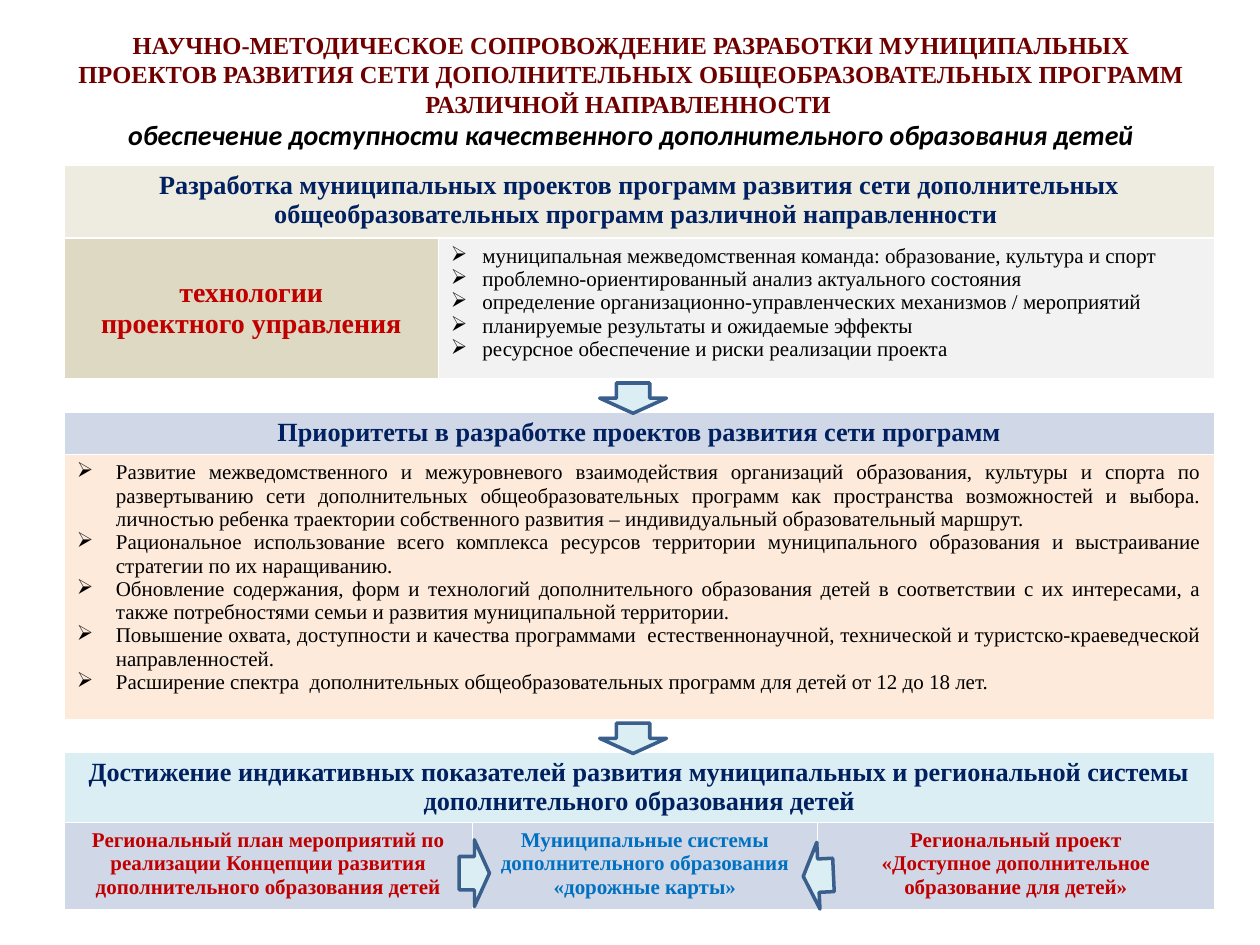
from lxml.etree import SubElement
from pptx import Presentation
from pptx.dml.color import RGBColor
from pptx.enum.shapes import MSO_SHAPE as SHAPE
from pptx.enum.text import MSO_ANCHOR as ANCHOR, MSO_AUTO_SIZE as AUTO, PP_ALIGN as ALIGN
from pptx.oxml.ns import qn
from pptx.util import Inches, Pt

MAROON = RGBColor(0x70, 0x00, 0x00)
BLACK = RGBColor(0x00, 0x00, 0x00)
WHITE = RGBColor(0xFF, 0xFF, 0xFF)
NAVY = RGBColor(0x00, 0x20, 0x60)
RED = RGBColor(0xC0, 0x00, 0x00)
BLUE = RGBColor(0x00, 0x70, 0xC0)
CREAM = RGBColor(0xEE, 0xEC, 0xE1)
KHAKI = RGBColor(0xDD, 0xD9, 0xC3)
GREY = RGBColor(0xF2, 0xF2, 0xF2)
LAVENDER = RGBColor(0xD0, 0xD8, 0xE8)
PEACH = RGBColor(0xFD, 0xEA, 0xDA)
AQUA = RGBColor(0xDB, 0xEE, 0xF4)
STEEL = RGBColor(0x3A, 0x5F, 0x8C)

SERIF = "Times New Roman"
COLUMNS = [1.14, 1.14, 0.69, 0.27, 1.33, 1.14, 0.27, 0.87, 1.14, 1.14]
ROWS = [0.58, 1.12, 0.26, 0.34, 2.1, 0.26, 0.55, 0.69]
SPACER_ROWS = (2, 5)

TITLE = ("НАУЧНО-МЕТОДИЧЕСКОЕ СОПРОВОЖДЕНИЕ РАЗРАБОТКИ МУНИЦИПАЛЬНЫХ "
         "ПРОЕКТОВ РАЗВИТИЯ СЕТИ ДОПОЛНИТЕЛЬНЫХ ОБЩЕОБРАЗОВАТЕЛЬНЫХ ПРОГРАММ "
         "РАЗЛИЧНОЙ НАПРАВЛЕННОСТИ ")
SUBTITLE = "обеспечение доступности качественного дополнительного образования детей"
DEVELOPMENT = ("Разработка муниципальных проектов программ развития сети дополнительных "
               "общеобразовательных программ различной направленности ")
TECHNOLOGIES = [
    "муниципальная межведомственная команда: образование, культура и спорт",
    "проблемно-ориентированный анализ актуального состояния",
    "определение организационно-управленческих механизмов / мероприятий",
    "планируемые результаты и ожидаемые эффекты",
    "ресурсное обеспечение и риски реализации проекта",
]
PRIORITIES = [
    "Развитие межведомственного и межуровневого взаимодействия организаций образования, "
    "культуры и спорта по развертыванию сети дополнительных общеобразовательных программ "
    "как пространства возможностей и выбора. личностью ребенка траектории собственного "
    "развития – индивидуальный образовательный маршрут.",
    "Рациональное использование всего комплекса ресурсов территории муниципального "
    "образования и выстраивание стратегии по их наращиванию.",
    "Обновление содержания, форм и технологий дополнительного образования детей в "
    "соответствии с их интересами, а также потребностями семьи и развития муниципальной "
    "территории.",
    "Повышение охвата, доступности и качества программами  естественнонаучной, "
    "технической и туристско-краеведческой направленностей.",
    "Расширение спектра  дополнительных общеобразовательных программ для детей "
    "от 12 до 18 лет.",
]
INDICATORS = ("Достижение индикативных показателей развития муниципальных и региональной "
              "системы дополнительного образования детей")
REGIONAL_PLAN = ["Региональный план мероприятий по реализации Концепции развития "
                 "дополнительного образования детей"]
ROADMAPS = ["Муниципальные системы дополнительного образования", "«дорожные карты»"]
REGIONAL_PROJECT = ["Региональный проект", "«Доступное дополнительное",
                    "образование для детей»"]


def add_run(p, text, size, color, font=SERIF, bold=True, italic=False):
    r = p.add_run()
    r.text = text
    f = r.font
    f.name, f.size, f.bold, f.italic = font, Pt(size), bold, italic
    f.color.rgb = color


def set_bullet(p, indent):
    """Give the paragraph an arrow bullet with a hanging indent in inches."""
    pPr = p._p.get_or_add_pPr()
    pPr.set("marL", str(Inches(indent)))
    pPr.set("indent", str(-Inches(indent)))
    SubElement(pPr, qn("a:buChar")).set("char", "➢")


def paint(cell, color):
    cell.fill.solid()
    cell.fill.fore_color.rgb = color


def fill_cell(table, row, col, span, fill, lines, size, color,
              bold=True, indent=None, anchor=ANCHOR.TOP):
    """Merge span columns from col; an indent makes the lines a justified list."""
    cell = table.cell(row, col)
    cell.merge(table.cell(row, col + span - 1))
    paint(cell, fill)
    cell.vertical_anchor = anchor
    tf = cell.text_frame
    for i, line in enumerate(lines):
        p = tf.add_paragraph() if i else tf.paragraphs[0]
        p.alignment = ALIGN.CENTER if indent is None else ALIGN.JUSTIFY
        if indent is not None:
            set_bullet(p, indent)
        add_run(p, line, size, color, bold=bold)


def fill_spacer_row(table, row):
    for col in (3, 6):
        table.cell(row, col).merge(table.cell(row, col + 1))
    for cell in table.rows[row].cells:
        paint(cell, WHITE)
        # A small end mark keeps the empty row low.
        SubElement(cell.text_frame.paragraphs[0]._p, qn("a:endParaRPr")).set("sz", "800")


def add_title(slide):
    sp = slide.shapes.title
    sp.left, sp.top, sp.width, sp.height = (Inches(v) for v in (0.51, 0.13, 9, 1.18))
    tf = sp.text_frame
    tf.word_wrap = True
    tf.auto_size = AUTO.NONE
    tf.vertical_anchor = ANCHOR.MIDDLE
    p = tf.paragraphs[0]
    p.alignment = ALIGN.CENTER
    add_run(p, TITLE, 14, MAROON)
    p.add_line_break()
    add_run(p, SUBTITLE, 16, BLACK, font="Calibri", italic=True)


def add_scheme_table(slide):
    frame = slide.shapes.add_table(len(ROWS), len(COLUMNS), Inches(0.51), Inches(1.31),
                                   Inches(sum(COLUMNS)), Inches(sum(ROWS)))
    table = frame.table
    table.horz_banding = False
    for column, width in zip(table.columns, COLUMNS):
        column.width = Inches(width)
    for row, height in zip(table.rows, ROWS):
        row.height = Inches(height)

    for row, fill, heading in ((0, CREAM, DEVELOPMENT),
                               (3, LAVENDER, "Приоритеты в разработке проектов развития сети программ"),
                               (6, AQUA, INDICATORS)):
        fill_cell(table, row, 0, 10, fill, [heading], 15, NAVY)
    fill_cell(table, 1, 0, 3, KHAKI, ["технологии", "проектного управления"], 16, RED,
              anchor=ANCHOR.MIDDLE)
    fill_cell(table, 1, 3, 7, GREY, TECHNOLOGIES, 12, BLACK, bold=False, indent=0.25)
    fill_cell(table, 4, 0, 10, PEACH, PRIORITIES, 12, BLACK, bold=False, indent=0.31)
    for col, span, lines, color in ((0, 4, REGIONAL_PLAN, RED),
                                    (4, 3, ROADMAPS, BLUE),
                                    (7, 3, REGIONAL_PROJECT, RED)):
        fill_cell(table, 7, col, span, LAVENDER, lines, 12, color)
    for row in SPACER_ROWS:
        fill_spacer_row(table, row)


def add_arrow(slide, left, top, rotation=0):
    sp = slide.shapes.add_shape(SHAPE.DOWN_ARROW, Inches(left), Inches(top),
                                Inches(0.53), Inches(0.24))
    sp.rotation = rotation
    sp.shadow.inherit = False
    sp.fill.solid()
    sp.fill.fore_color.rgb = AQUA
    sp.line.color.rgb = STEEL
    sp.line.width = Pt(2)


def main():
    prs = Presentation()
    prs.slide_width, prs.slide_height = Inches(10), Inches(7.5)
    slide = prs.slides.add_slide(prs.slide_layouts[5])
    add_title(slide)
    add_scheme_table(slide)
    for left, top, rotation in ((4.76, 3.04, 0), (4.76, 5.74, 0),
                                (6.23, 6.83, 87.3), (3.5, 6.81, 270)):
        add_arrow(slide, left, top, rotation)
    prs.save("out.pptx")


if __name__ == "__main__":
    main()
